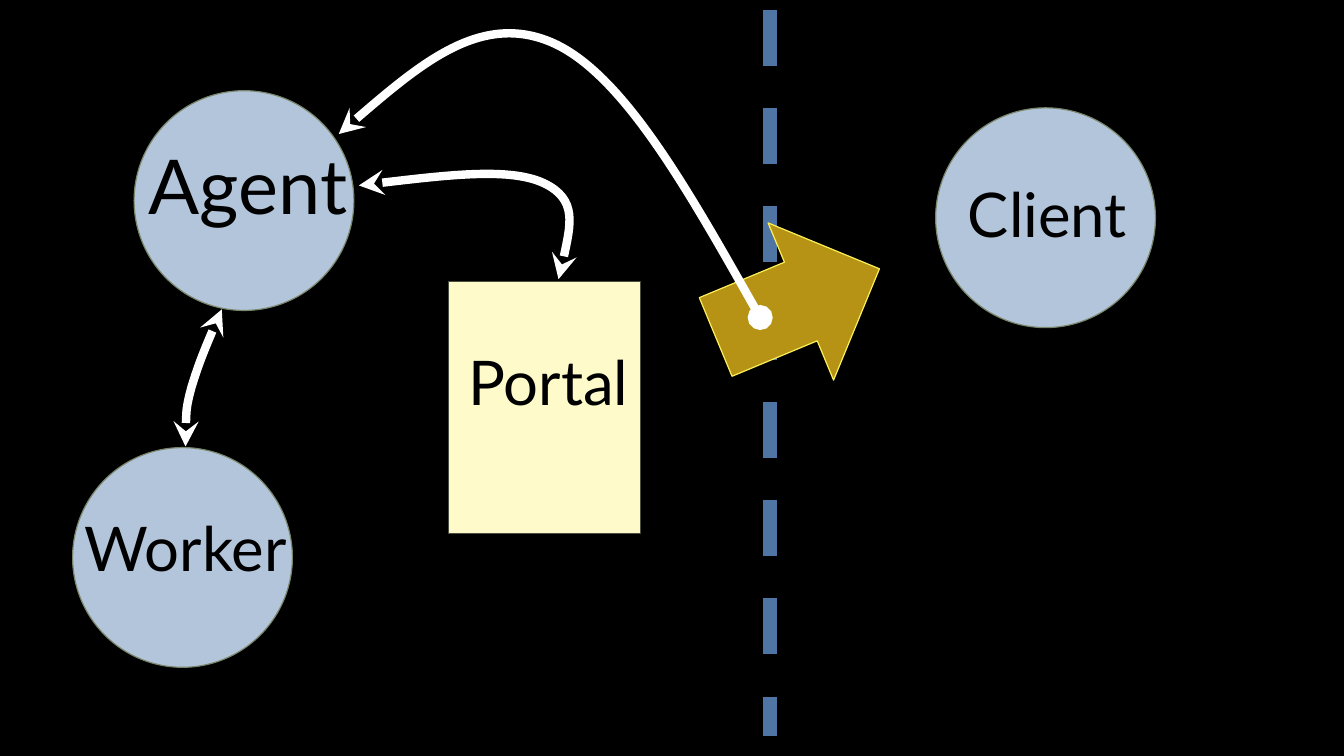
"""Builds a slide of an agent, its worker, a portal and a remote client."""
from pptx import Presentation
from pptx.dml.color import RGBColor
from pptx.enum import dml, shapes, text
from pptx.oxml import ns
from pptx.util import Inches, Pt
from lxml import etree

BLACK = RGBColor(0x00, 0x00, 0x00)
WHITE = RGBColor(0xFF, 0xFF, 0xFF)
BLUE = RGBColor(0xB3, 0xC5, 0xDA)
OLIVE = RGBColor(0x7A, 0x86, 0x6C)
STEEL = RGBColor(0x4E, 0x75, 0xA3)
GOLD = RGBColor(0xB7, 0x93, 0x15)
LEMON = RGBColor(0xFC, 0xF0, 0x59)
CREAM = RGBColor(0xFE, 0xFA, 0xC9)
MOSS = RGBColor(0x48, 0x4F, 0x40)

FONT = "Lato"
SIDE = 2.18
LABEL = 3.1
THIN = 0.85
KIND = shapes.MSO_SHAPE

NODES = [
    ("Agent", (1.33, 0.9), (0.91, 1.33), 54),
    ("Client", (9.28, 1.07), (8.84, 1.69), 44),
    ("Worker", (0.72, 4.44), (0.29, 5.01), 44),
]
BORDER = (7.64, 0.1, 7.64, 7.3)
WORK = [(2.2, 3.07), (2.08, 3.34), (1.97, 3.61), (1.9, 3.84),
        (1.84, 4.06), (1.84, 4.25), (1.84, 4.43)]
SERVE = [(3.56, 1.84), (4.31, 1.75), (5.07, 1.66), (5.4, 1.82),
         (5.73, 1.98), (5.64, 2.37), (5.54, 2.77)]
CALL = [(7.54, 3.15), (6.85, 1.93), (6.17, 0.72), (5.47, 0.42),
        (4.77, 0.12), (4.06, 0.72), (3.36, 1.33)]

deck = Presentation()
deck.slide_width, deck.slide_height = Inches(13.33), Inches(7.5)
slide = deck.slides.add_slide(deck.slide_layouts[6])
slide.background.fill.solid()
slide.background.fill.fore_color.rgb = BLACK


def add_block(kind, box, fill, line, turn=0):
    block = slide.shapes.add_shape(kind, *map(Inches, box))
    block.shadow.inherit = False
    block.fill.solid()
    block.fill.fore_color.rgb = fill
    block.line.color.rgb = line
    block.line.width = Pt(THIN)
    block.rotation = turn


def add_label(words, left, top, size=44, color=BLACK):
    high = size * 1.2 / 72 + 0.1
    box = slide.shapes.add_textbox(*map(Inches, (left, top, LABEL, high)))
    frame = box.text_frame
    frame.word_wrap = True
    frame.auto_size = text.MSO_AUTO_SIZE.SHAPE_TO_FIT_TEXT
    frame.vertical_anchor = text.MSO_ANCHOR.MIDDLE
    line = frame.paragraphs[0]
    line.alignment = text.PP_ALIGN.CENTER
    run = line.add_run()
    run.text = words
    run.font.name, run.font.size = FONT, Pt(size)
    run.font.color.rgb = color


def add_curve(points, head="stealth", tail="stealth"):
    spots = [(Inches(x), Inches(y)) for x, y in points]
    pen = slide.shapes.build_freeform(*spots[0])
    pen.add_line_segments(spots[1:], close=False)
    curve = pen.convert_to_shape()
    curve.shadow.inherit = False
    curve.fill.background()
    curve.line.color.rgb = WHITE
    curve.line.width = Pt(6)
    route = curve._element.find(".//" + ns.qn("a:path"))
    steps = route.findall(ns.qn("a:lnTo"))
    for start in range(0, len(steps), 3):
        bend = etree.SubElement(route, ns.qn("a:cubicBezTo"))
        for step in steps[start:start + 3]:
            bend.append(step[0])
            route.remove(step)
    edge = curve.line._get_or_add_ln()
    for tag, shape in (("a:headEnd", head), ("a:tailEnd", tail)):
        etree.SubElement(edge, ns.qn(tag), type=shape)


for name, spot, place, size in NODES:
    add_block(KIND.OVAL, (*spot, SIDE, SIDE), BLUE, OLIVE)
    add_label(name, *place, size=size)

wall = slide.shapes.add_connector(
    shapes.MSO_CONNECTOR.STRAIGHT, *map(Inches, BORDER))
wall.line.color.rgb = STEEL
wall.line.width = Pt(10)
wall.line.dash_style = dml.MSO_LINE.DASH
etree.SubElement(wall._element.spPr, ns.qn("a:effectLst"))

add_curve(WORK)
add_curve(SERVE)
add_block(KIND.LEFT_ARROW, (7.03, 2.16, 1.76, 1.69), GOLD, LEMON, turn=157.4)
add_curve(CALL, head="oval")
add_block(KIND.RECTANGLE, (4.45, 2.79, 1.9, 2.5), CREAM, MOSS)
add_label("Portal", 3.89, 3.36)

deck.save("out.pptx")
